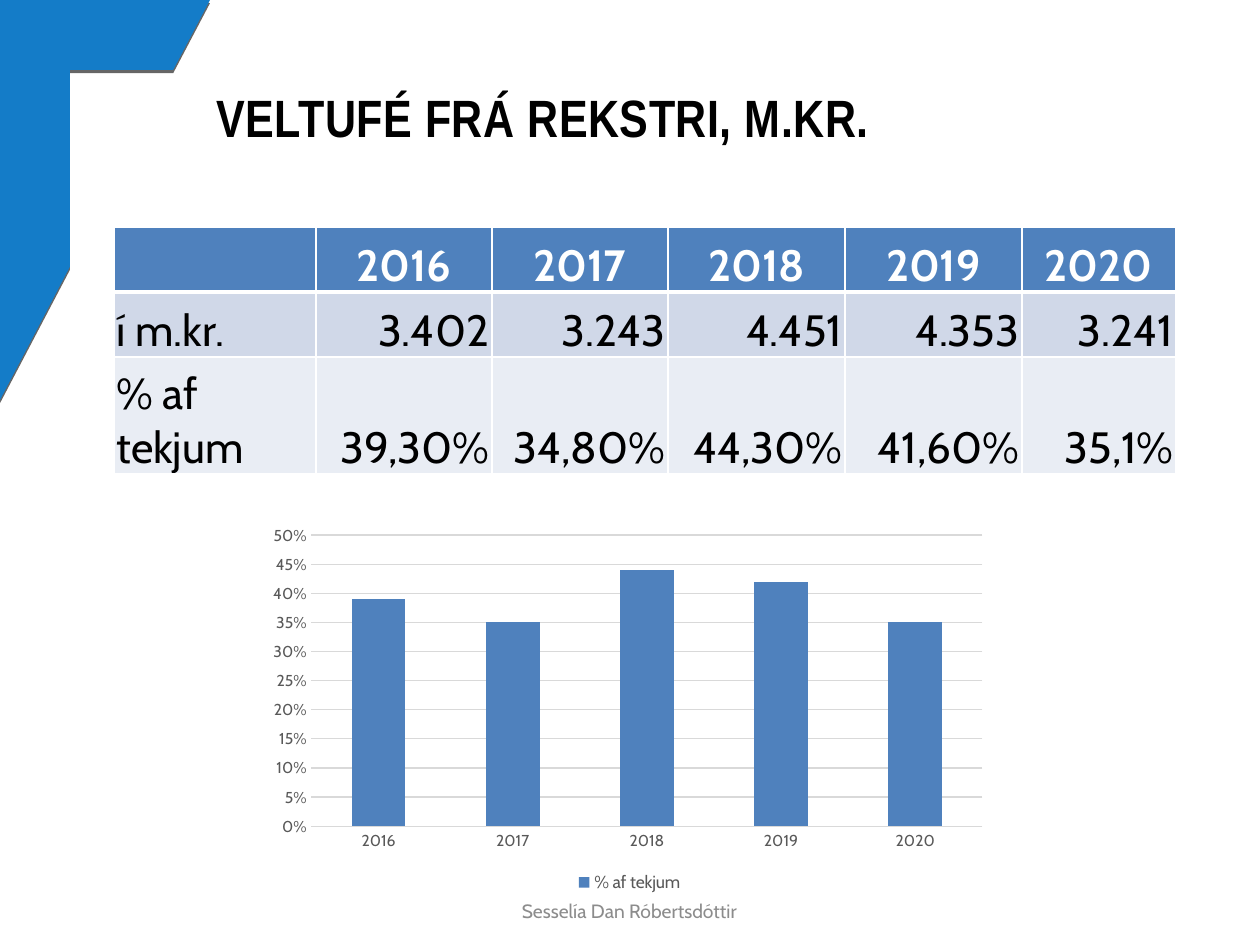
from lxml import etree
from pptx import Presentation
from pptx import util as u
from pptx.chart.data import CategoryChartData
from pptx.dml.color import RGBColor
from pptx.enum import chart as ch, shapes, text
from pptx.oxml import parse_xml
from pptx.oxml.ns import nsdecls, qn

PX = 914400 // 126
BLUE = RGBColor(0x14, 0x7C, 0xC8)
STEEL = RGBColor(0x4F, 0x81, 0xBD)
BAND_DARK = RGBColor(0xD0, 0xD8, 0xE8)
BAND_LIGHT = RGBColor(0xE9, 0xED, 0xF4)
WHITE = RGBColor(0xFF, 0xFF, 0xFF)
BLACK = RGBColor(0x00, 0x00, 0x00)
GREY = RGBColor(0x8C, 0x8C, 0x8C)
AXIS_TEXT = RGBColor(0x59, 0x59, 0x59)
GRID = RGBColor(0xD9, 0xD9, 0xD9)
BODY_FONT = "Cabin"

TITLE = "VELTUFÉ FRÁ REKSTRI, M.KR."
FOOTER = "Sesselía Dan Róbertsdóttir"
YEARS = ["2016", "2017", "2018", "2019", "2020"]
RATIO = "% af tekjum"
ROWS = [
    ["", *YEARS],
    ["í m.kr.", "3.402", "3.243", "4.451", "4.353", "3.241"],
    [RATIO, "39,30%", "34,80%", "44,30%", "41,60%", "35,1%"],
]
SHARES = [0.39, 0.35, 0.44, 0.42, 0.35]
ROW_FILLS = [STEEL, BAND_DARK, BAND_LIGHT]
COL_WIDTHS = [202, 176, 176, 177, 177, 154]
ROW_HEIGHTS = [65, 65, 117]
PLOT = {"x": 0.072, "y": 0.072, "w": 0.903, "h": 0.745}


def px(*lengths):
    return [n * PX for n in lengths]


def style(font, size, color, bold=False, name=BODY_FONT):
    font.size, font.bold, font.name = u.Pt(size), bold, name
    font.color.rgb = color


def write(frame, words, size, color, bold=False, name=BODY_FONT, align=text.PP_ALIGN.LEFT, spacing=0):
    frame.word_wrap = True
    paragraph = frame.paragraphs[0]
    paragraph.alignment = align
    run = paragraph.add_run()
    run.text = words
    style(run.font, size, color, bold, name)
    if spacing:
        run._r.get_or_add_rPr().set("spc", str(spacing))


def add_label(slide, box, words, **look):
    frame = slide.shapes.add_textbox(*px(*box)).text_frame
    frame.vertical_anchor = text.MSO_ANCHOR.MIDDLE
    write(frame, words, **look)


def add_corner(slide):
    corner = slide.shapes.add_shape(shapes.MSO_SHAPE.HALF_FRAME, *px(0, 0, 210, 400))
    corner.fill.solid()
    corner.fill.fore_color.rgb = BLUE
    corner.line.fill.background()
    corner.shadow.inherit = False
    corner._element.spPr.find(qn("a:effectLst")).append(parse_xml(
        f'<a:outerShdw {nsdecls("a")} blurRad="0" dist="22860" dir="5400000" rotWithShape="0">'
        '<a:srgbClr val="000000"><a:alpha val="60000"/></a:srgbClr></a:outerShdw>'))


def add_borders(cell, widths):
    for side, width in widths.items():
        cell._tc.get_or_add_tcPr().append(parse_xml(
            f'<a:ln{side} {nsdecls("a")} w="{u.Pt(width)}"><a:solidFill>'
            f'<a:srgbClr val="{WHITE}"/></a:solidFill></a:ln{side}>'))


def add_figures(slide):
    box = px(114, 227, sum(COL_WIDTHS), sum(ROW_HEIGHTS))
    table = slide.shapes.add_table(len(ROWS), len(COL_WIDTHS), *box).table
    for column, width in zip(table.columns, px(*COL_WIDTHS)):
        column.width = width
    for row, height in zip(table.rows, px(*ROW_HEIGHTS)):
        row.height = height
    for r, entries in enumerate(ROWS):
        header = r == 0
        for c, entry in enumerate(entries):
            cell = table.cell(r, c)
            add_borders(cell, {"L": 1, "R": 1, "T": 3 if r == 1 else 1, "B": 3 if header else 1})
            cell.fill.solid()
            cell.fill.fore_color.rgb = ROW_FILLS[r]
            cell.vertical_anchor = text.MSO_ANCHOR.BOTTOM
            cell.margin_left = cell.margin_right = cell.margin_top = u.Inches(0.02)
            cell.margin_bottom = 0
            if entry:
                align = text.PP_ALIGN.CENTER if header else text.PP_ALIGN.RIGHT if c else text.PP_ALIGN.LEFT
                write(cell.text_frame, entry, 25, WHITE if header else BLACK, bold=header, align=align)


def place_plot(chart):
    area = chart._chartSpace.chart.plotArea
    for old in area.findall(qn("c:layout")):
        area.remove(old)
    layout = etree.Element(qn("c:layout"))
    manual = etree.SubElement(layout, qn("c:manualLayout"))
    settings = {"layoutTarget": "inner", "xMode": "edge", "yMode": "edge", **PLOT}
    for key, value in settings.items():
        etree.SubElement(manual, qn(f"c:{key}")).set("val", str(value))
    area.insert(0, layout)


def add_share_chart(slide):
    data = CategoryChartData(number_format="0%")
    data.categories = YEARS
    data.add_series(RATIO, SHARES)
    chart = slide.shapes.add_chart(
        ch.XL_CHART_TYPE.COLUMN_STACKED, *px(258, 507, 743, 391), data).chart
    style(chart.font, 10, BLACK)
    chart.has_title = False
    chart.has_legend = True
    chart.legend.position = ch.XL_LEGEND_POSITION.BOTTOM
    chart.legend.include_in_layout = False
    style(chart.legend.font, 10, AXIS_TEXT)

    columns = chart.plots[0]
    columns.gap_width, columns.overlap, columns.vary_by_categories = 150, 100, False
    fill = columns.series[0].format.fill
    fill.solid()
    fill.fore_color.rgb = STEEL

    years, shares = chart.category_axis, chart.value_axis
    for axis in (years, shares):
        axis.major_tick_mark = axis.minor_tick_mark = ch.XL_TICK_MARK.NONE
        style(axis.tick_labels.font, 9, AXIS_TEXT)
    shares.minimum_scale, shares.maximum_scale, shares.major_unit = 0, 0.5, 0.05
    shares.has_major_gridlines = True
    shares.tick_labels.number_format = "0%"
    shares.tick_labels.number_format_is_linked = False
    shares.format.line.fill.background()
    for line in (years.format.line, shares.major_gridlines.format.line):
        line.color.rgb = GRID
        line.width = u.Pt(0.75)
    place_plot(chart)


def main():
    deck = Presentation()
    deck.slide_width, deck.slide_height = px(1260, 945)
    slide = deck.slides.add_slide(deck.slide_layouts[6])
    add_corner(slide)
    add_label(slide, (204, 38, 1017, 157), TITLE, size=30, color=BLACK, bold=True,
              name="Arial Narrow", spacing=30)
    add_label(slide, (430, 891, 399, 40), FOOTER, size=11, color=GREY, align=text.PP_ALIGN.CENTER)
    add_figures(slide)
    add_share_chart(slide)
    deck.save("out.pptx")


if __name__ == "__main__":
    main()
